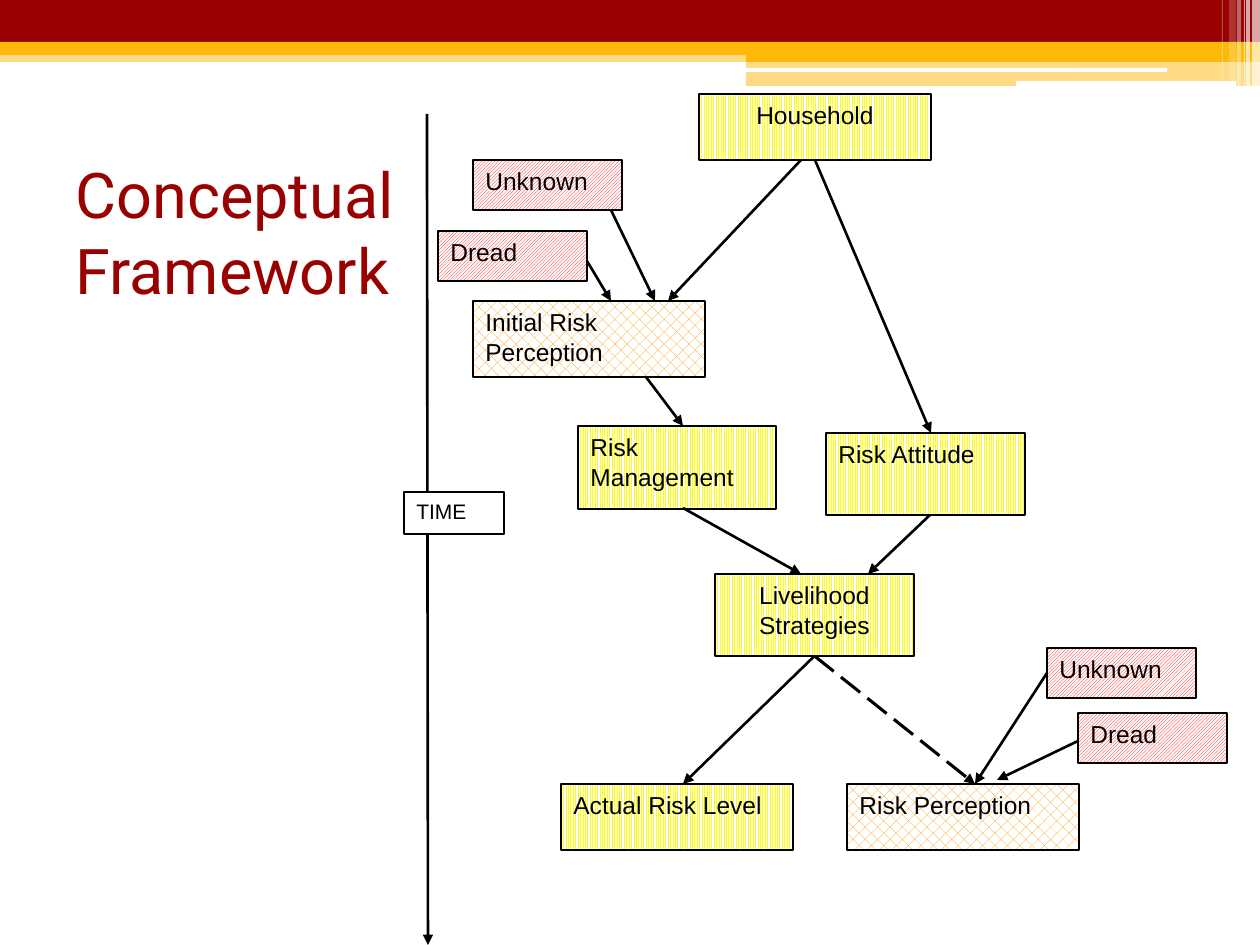
from pptx import Presentation
from pptx.dml.color import RGBColor
from pptx.enum.dml import MSO_LINE, MSO_PATTERN
from pptx.enum.shapes import MSO_CONNECTOR, MSO_SHAPE
from pptx.enum.text import MSO_ANCHOR, MSO_AUTO_SIZE, PP_ALIGN
from pptx.oxml.ns import qn
from pptx.util import Pt

EMU_PER_PX = 914400 / 126
RECT, ROUNDED = MSO_SHAPE.RECTANGLE, MSO_SHAPE.ROUNDED_RECTANGLE
STRAIGHT = MSO_CONNECTOR.STRAIGHT
LEFT, CENTER = PP_ALIGN.LEFT, PP_ALIGN.CENTER
TOP, MIDDLE = MSO_ANCHOR.TOP, MSO_ANCHOR.MIDDLE
NO_FIT = MSO_AUTO_SIZE.NONE
LONG_DASH = MSO_LINE.LONG_DASH
LEFT_SITE, BOTTOM_SITE = 1, 2

COLORS = {
    "maroon": "990000", "gold": "FEB80A", "white": "FFFFFF", "black": "000000",
    "yellow": "FFFF00", "orange": "FF9900", "red": "FF0000",
}
PATTERNS = {
    "stage": (MSO_PATTERN.LIGHT_VERTICAL, "yellow"),
    "perception": (MSO_PATTERN.PERCENT_30, "orange"),
    "factor": (MSO_PATTERN.LIGHT_UPWARD_DIAGONAL, "red"),
}
BANNER = [
    (RECT, 0, 50, 1260, 12, "gold", 50),
    (RECT, 0, 0, 1260, 42, "maroon", 100),
    (RECT, 0, 42, 1260, 13, "gold", 100),
    (RECT, 746, 49, 514, 13, "gold", 100),
    (RECT, 746, 61, 514, 25, "gold", 50),
    (ROUNDED, 745, 68, 422, 4, "white", 100),
    (ROUNDED, 1016, 81, 220, 5, "white", 100),
    (RECT, 1252, 0, 8, 86, "white", 65),
    (RECT, 1246, 0, 4, 86, "white", 65),
    (RECT, 1244, 0, 1, 86, "white", 60),
    (RECT, 1237, 0, 4, 86, "white", 40),
    (RECT, 1229, 0, 7, 81, "white", 20),
    (RECT, 1222, 0, 1, 81, "white", 30),
]
BOXES = {
    "household": ("Household", "stage", CENTER, 699, 94, 232, 66),
    "management": ("Risk\nManagement", "stage", LEFT, 578, 426, 198, 83),
    "actual": ("Actual Risk Level", "stage", LEFT, 561, 784, 232, 66),
    "perception": ("Risk Perception", "perception", LEFT, 847, 784, 232, 66),
    "late unknown": ("Unknown", "factor", LEFT, 1047, 648, 149, 50),
    "late dread": ("Dread", "factor", LEFT, 1078, 713, 149, 50),
    "attitude": ("Risk Attitude", "stage", LEFT, 826, 433, 199, 82),
    "livelihood": ("Livelihood\nStrategies", "stage", CENTER, 715, 574, 199, 82),
    "early unknown": ("Unknown", "factor", LEFT, 473, 160, 149, 50),
    "early dread": ("Dread", "factor", LEFT, 438, 231, 149, 50),
    "initial": ("Initial Risk Perception", "perception", LEFT, 473, 301, 232, 76),
}
FREE_ARROWS = [
    (801, 160, 668, 301),
    (930, 515, 868, 574),
    (683, 508, 801, 574),
    (1078, 741, 997, 780),
    (611, 210, 655, 301),
    (587, 261, 611, 301),
    (646, 377, 683, 426),
    (427, 114, 428, 945),
]
JOINED_ARROWS = [
    ("household", BOTTOM_SITE, 931, 433, 1.5, None),
    ("livelihood", BOTTOM_SITE, 683, 784, 1.5, None),
    ("livelihood", BOTTOM_SITE, 975, 784, 1.75, LONG_DASH),
    ("late unknown", LEFT_SITE, 975, 784, 1.5, None),
]


def px(length):
    """Turn pixels into EMU."""
    return round(length * EMU_PER_PX)


def rgb(name):
    """Look up a palette colour."""
    return RGBColor.from_string(COLORS[name])


def style_text(frame, font_name, size, color, align, anchor):
    """Format all paragraphs of a text frame alike."""
    frame.word_wrap = True
    frame.auto_size = NO_FIT
    frame.vertical_anchor = anchor
    for paragraph in frame.paragraphs:
        paragraph.alignment = align
        paragraph.font.name = font_name
        paragraph.font.size = Pt(size)
        paragraph.font.color.rgb = rgb(color)


def add_block(slide, preset, left, top, width, height):
    """Add a preset shape without a shadow."""
    block = slide.shapes.add_shape(preset, px(left), px(top), px(width), px(height))
    block.shadow.inherit = False
    return block


def add_bar(slide, preset, left, top, width, height, color, opacity):
    """Add one borderless bar of the banner."""
    bar = add_block(slide, preset, left, top, width, height)
    bar.fill.solid()
    bar.fill.fore_color.rgb = rgb(color)
    bar.line.fill.background()
    if opacity < 100:
        tint = bar.element.spPr.find(".//" + qn("a:srgbClr"))
        alpha = tint.makeelement(qn("a:alpha"), {"val": str(opacity * 1000)})
        tint.append(alpha)


def add_title(slide):
    """Place and format the slide title."""
    title = slide.shapes.title
    title.left, title.top, title.width, title.height = map(px, (63, 158, 1134, 147))
    title.text_frame.text = "Conceptual\vFramework"
    style_text(title.text_frame, "Roboto", 36, "maroon", LEFT, MIDDLE)


def add_box(slide, label, role, align, left, top, width, height):
    """Add a patterned, labelled box of the framework."""
    box = add_block(slide, RECT, left, top, width, height)
    pattern, color = PATTERNS[role]
    box.fill.patterned()
    box.fill.pattern = pattern
    box.fill.fore_color.rgb = rgb(color)
    box.fill.back_color.rgb = rgb("white")
    box.line.color.rgb = rgb("black")
    box.line.width = Pt(1.5)
    box.text_frame.text = label
    style_text(box.text_frame, "Arial", 14, "black", align, TOP)
    return box


def add_time_label(slide):
    """Add the plain label on the time axis."""
    label = add_block(slide, RECT, 404, 492, 100, 42)
    label.fill.solid()
    label.fill.fore_color.rgb = rgb("white")
    label.line.color.rgb = rgb("black")
    label.line.width = Pt(0.75)
    label.text_frame.text = "TIME"
    style_text(label.text_frame, "Arial", 12, "black", LEFT, TOP)


def add_arrow(slide, x1, y1, x2, y2, weight=1.5, dash=None):
    """Add a straight black arrow."""
    arrow = slide.shapes.add_connector(STRAIGHT, px(x1), px(y1), px(x2), px(y2))
    arrow.line.color.rgb = rgb("black")
    arrow.line.width = Pt(weight)
    if dash:
        arrow.line.dash_style = dash
    properties = arrow.element.spPr
    outline = properties.find(qn("a:ln"))
    outline.append(outline.makeelement(qn("a:tailEnd"), {"type": "triangle"}))
    properties.append(properties.makeelement(qn("a:effectLst"), {}))
    return arrow


def main():
    """Build the conceptual framework slide."""
    presentation = Presentation()
    presentation.slide_width, presentation.slide_height = px(1260), px(945)
    slide = presentation.slides.add_slide(presentation.slide_layouts[5])
    for bar in BANNER:
        add_bar(slide, *bar)
    add_title(slide)
    boxes = {key: add_box(slide, *box) for key, box in BOXES.items()}
    for arrow in FREE_ARROWS:
        add_arrow(slide, *arrow)
    for source, site, x, y, weight, dash in JOINED_ARROWS:
        add_arrow(slide, x, y, x, y, weight, dash).begin_connect(boxes[source], site)
    add_time_label(slide)
    presentation.save("out.pptx")


if __name__ == "__main__":
    main()
